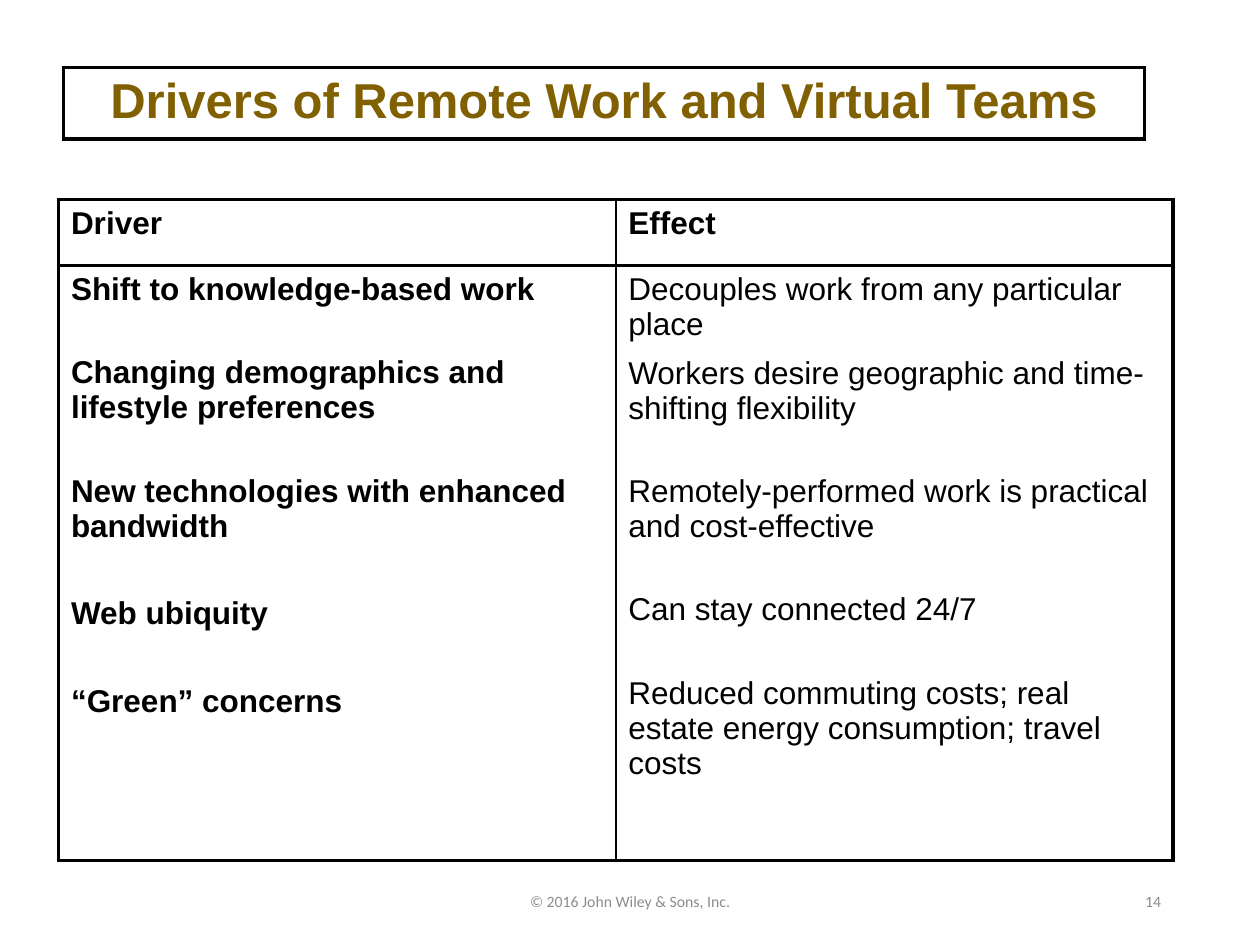
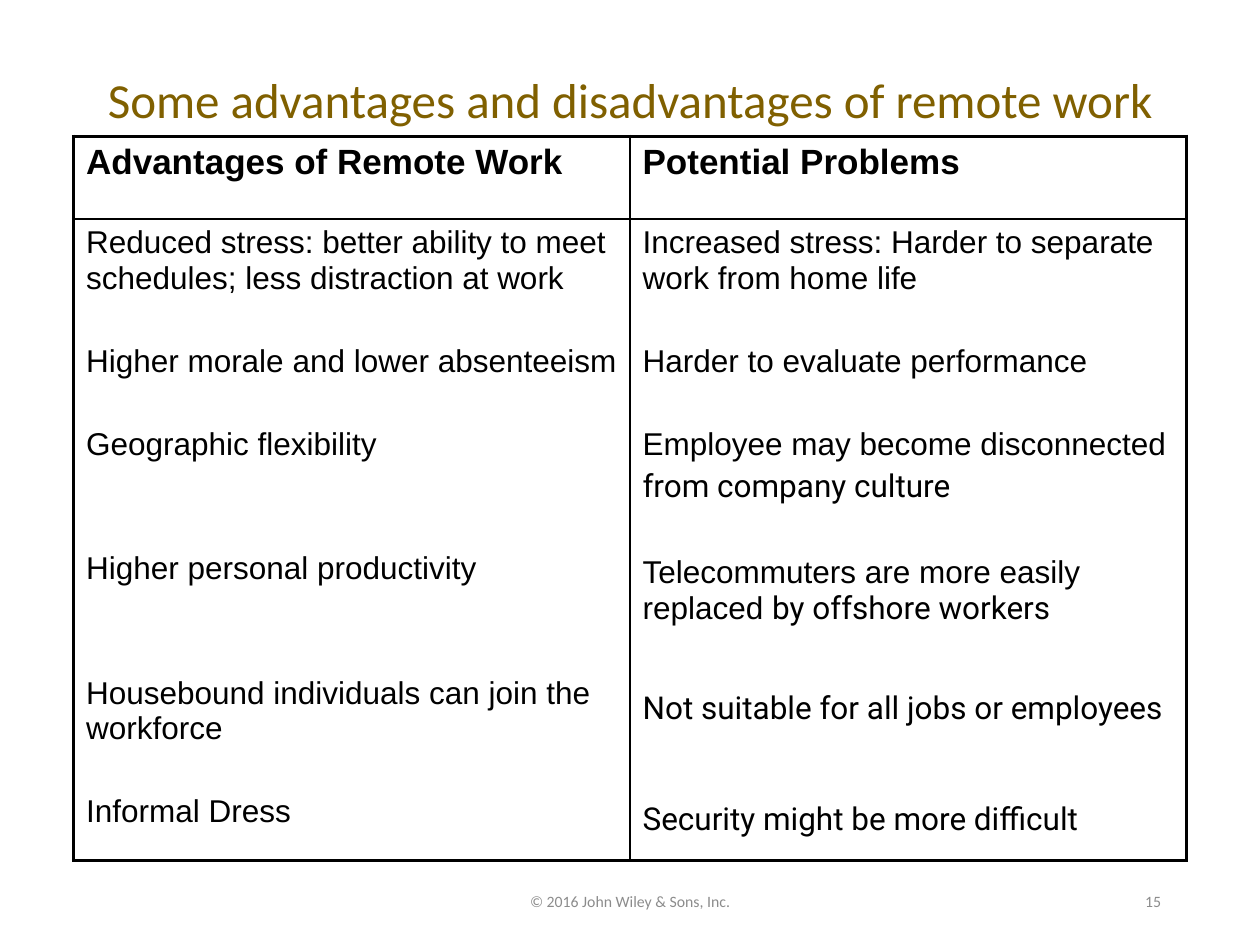
from dataclasses import dataclass
from itertools import product

from lxml import etree
from pptx import Presentation
from pptx.dml.color import RGBColor
from pptx.enum.text import MSO_ANCHOR, PP_ALIGN
from pptx.oxml.ns import qn
from pptx.util import Pt

LEFT, CENTER, RIGHT = PP_ALIGN.LEFT, PP_ALIGN.CENTER, PP_ALIGN.RIGHT
TOP, MIDDLE = MSO_ANCHOR.TOP, MSO_ANCHOR.MIDDLE

COLORS = {"ink": "000000", "title": "806000", "footer": "8C8C8C"}
ARIAL, CALIBRI, ROBOTO = "Arial", "Calibri", "Roboto"
BODY_SIZE, TITLE_SIZE, FOOTER_SIZE = 18, 28, 9
THICK, THIN = 2.25, 1

TIGHT = 3.6
NARROW = 7.5
SINGLE = 27.3
WIDE = 29.9
DOUBLE = 51


@dataclass(frozen=True)
class Box:
    left: float
    top: float
    width: float
    height: float

    def lengths(self):
        return Pt(self.left), Pt(self.top), Pt(self.width), Pt(self.height)


@dataclass(frozen=True)
class Entry:
    text: str
    gap: float = SINGLE
    font: str = ARIAL
    tail: str = ""


@dataclass(frozen=True)
class Column:
    heading: str
    entries: tuple[Entry, ...]
    bold: bool = False


@dataclass(frozen=True)
class Comparison:
    box: Box
    header_height: float
    heading_size: float
    divider: float
    columns: tuple[Column, ...]


TITLE_FRAME = Box(36.2, 38.7, 617.8, 40.3)
TITLE_LINE = Box(51, 36, 618, 41)
COPYRIGHT = Box(238.5, 500.5, 243, 28.75)
PAGE_NUMBER = Box(508.5, 500.5, 162, 28.75)

DRIVERS = Comparison(
    Box(33.4, 113.9, 637, 378), 38, 18, THICK,
    (
        Column("Driver", (
            Entry("Shift to knowledge-based work"),
            Entry("Changing demographics and lifestyle preferences"),
            Entry("New technologies with enhanced bandwidth"),
            Entry("Web ubiquity", WIDE),
            Entry("“Green” concerns", WIDE),
        ), bold=True),
        Column("Effect", (
            Entry("Decouples work from any particular place"),
            Entry("Workers desire geographic and time-shifting flexibility", NARROW),
            Entry("Remotely-performed work is practical and cost-effective"),
            Entry("Can stay connected 24/7"),
            Entry("Reduced commuting costs; real estate energy consumption; travel costs"),
        )),
    ),
)

TRADE_OFFS = Comparison(
    Box(42, 77.9, 636, 405), 47.3, 20, THIN,
    (
        Column("Advantages of Remote Work", (
            Entry("Reduced stress: better ability to meet schedules; less distraction at work"),
            Entry("Higher morale and lower absenteeism"),
            Entry("Geographic flexibility"),
            Entry("Higher personal productivity", DOUBLE),
            Entry("Housebound individuals can join the workforce", DOUBLE),
            Entry("Informal Dress"),
        )),
        Column("Potential Problems", (
            Entry("Increased stress: Harder to separate work from home life"),
            Entry("Harder to evaluate performance"),
            Entry("Employee may become disconnected"),
            Entry("from company culture", TIGHT, ROBOTO),
            Entry("Telecommuters are more easily replaced ", 28.3, tail="by offshore workers"),
            Entry("Not suitable for all jobs or employees", 36.3, ROBOTO),
            Entry("Security might be more difficult", 42.3, ROBOTO),
        )),
    ),
)


def write(paragraph, text: str, *, font: str = ARIAL, size: float = BODY_SIZE,
          color: str = "ink", bold: bool = False, align=LEFT, gap: float = 0) -> None:
    paragraph.alignment = align
    paragraph.space_before = Pt(gap)
    run = paragraph.add_run()
    run.text = text
    run.font.name = font
    run.font.size = Pt(size)
    run.font.bold = bold
    run.font.color.rgb = RGBColor.from_string(COLORS[color])


def add_line(slide, box: Box, text: str, *, anchor=MIDDLE, wrap: bool = True, **style) -> None:
    frame = slide.shapes.add_textbox(*box.lengths()).text_frame
    frame.word_wrap = wrap
    frame.vertical_anchor = anchor
    write(frame.paragraphs[0], text, font=CALIBRI, **style)


def set_borders(cell, widths: dict[str, float]) -> None:
    properties = cell._tc.get_or_add_tcPr()
    for side, width in widths.items():
        line = etree.SubElement(properties, qn(f"a:ln{side}"), w=str(Pt(width)))
        fill = etree.SubElement(line, qn("a:solidFill"))
        etree.SubElement(fill, qn("a:srgbClr"), val=COLORS["ink"])


def add_grid(slide, box: Box, heights: list[float], columns: int, divider: float = THICK):
    rows = len(heights)
    table = slide.shapes.add_table(rows, columns, *box.lengths()).table
    table.first_row = table.horz_banding = False
    for row, height in zip(table.rows, heights):
        row.height = Pt(height)
    for column in table.columns:
        column.width = Pt(box.width / columns)
    for row, column in product(range(rows), range(columns)):
        cell = table.cell(row, column)
        set_borders(cell, {
            "L": THICK if column == 0 else THIN,
            "R": THICK if column == columns - 1 else THIN,
            "T": THICK if row == 0 else divider,
            "B": THICK if row == rows - 1 else divider,
        })
        cell.fill.background()
    return table


def add_comparison(slide, comparison: Comparison) -> None:
    box, header = comparison.box, comparison.header_height
    table = add_grid(slide, box, [header, box.height - header],
                     len(comparison.columns), comparison.divider)
    for index, column in enumerate(comparison.columns):
        write(table.cell(0, index).text_frame.paragraphs[0], column.heading,
              size=comparison.heading_size, bold=True)
        body = table.cell(1, index).text_frame
        for position, entry in enumerate(column.entries):
            paragraph = body.add_paragraph() if position else body.paragraphs[0]
            gap = entry.gap if position else 0
            write(paragraph, entry.text, font=entry.font, bold=column.bold, gap=gap)
            if entry.tail:
                write(paragraph, entry.tail, font=ROBOTO, bold=column.bold, gap=gap)


def add_page(deck, comparison: Comparison, number: int):
    slide = deck.slides.add_slide(deck.slide_layouts[6])
    footer = {"size": FOOTER_SIZE, "color": "footer"}
    add_line(slide, PAGE_NUMBER, str(number), align=RIGHT, **footer)
    add_comparison(slide, comparison)
    add_line(slide, COPYRIGHT, "© 2016 John Wiley & Sons, Inc.", align=CENTER, **footer)
    return slide


def main() -> None:
    deck = Presentation()
    deck.slide_width, deck.slide_height = Pt(720), Pt(540)
    title = {"size": TITLE_SIZE, "color": "title", "align": CENTER}

    drivers = add_page(deck, DRIVERS, 14)
    framed = add_grid(drivers, TITLE_FRAME, [TITLE_FRAME.height], 1)
    write(framed.cell(0, 0).text_frame.paragraphs[0],
          "Drivers of Remote Work and Virtual Teams", bold=True, **title)

    trade_offs = add_page(deck, TRADE_OFFS, 15)
    add_line(trade_offs, TITLE_LINE, "Some advantages and disadvantages of remote work",
             anchor=TOP, wrap=False, **title)

    deck.save("out.pptx")


if __name__ == "__main__":
    main()
